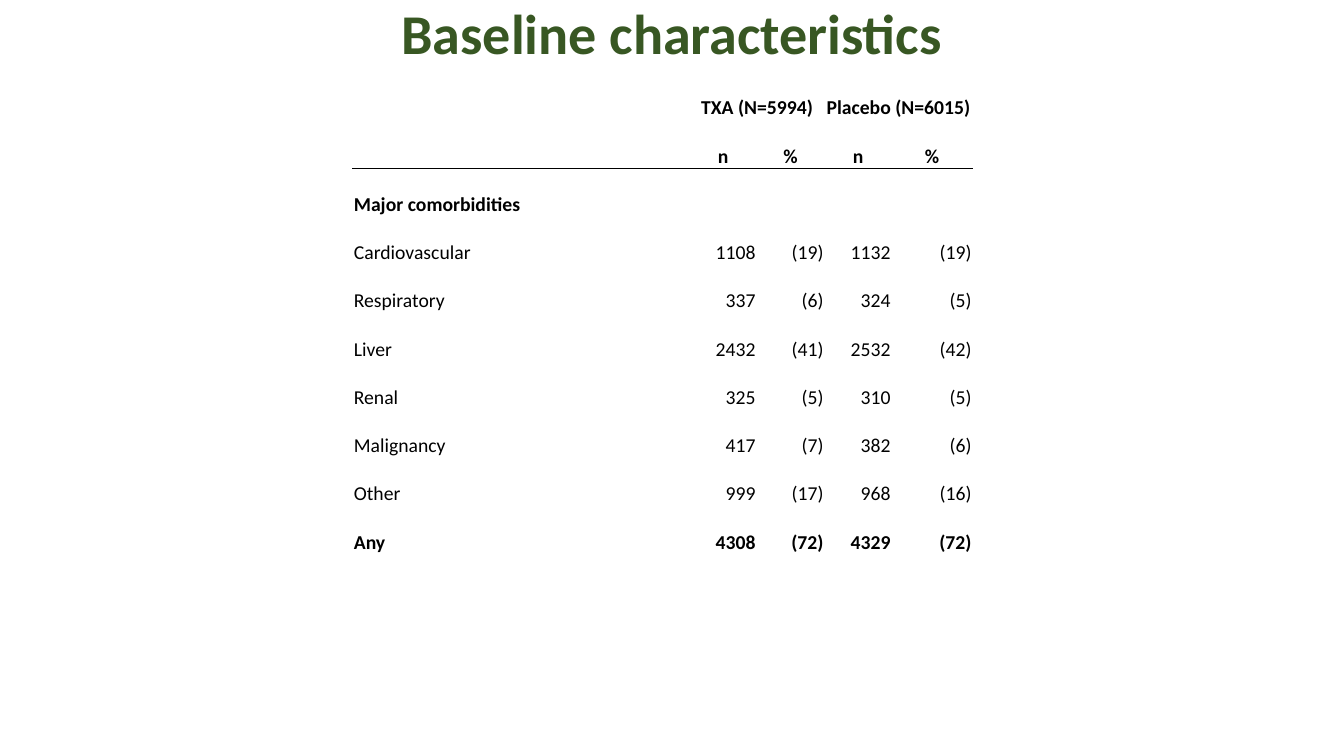
"""Build the baseline characteristics slide with its comorbidity table."""
from dataclasses import dataclass

from lxml.etree import SubElement
from pptx import Presentation
from pptx.dml.color import RGBColor
from pptx.enum.text import MSO_ANCHOR, PP_ALIGN
from pptx.oxml import parse_xml
from pptx.oxml.ns import nsdecls, qn
from pptx.util import Emu, Inches, Pt

TITLE = "Baseline characteristics"
ROWS = [
    ("", "TXA (N=5994)", "", "Placebo (N=6015)", ""),
    ("", "n", "%", "n", "%"),
    ("Major comorbidities", "", "", "", ""),
    ("Cardiovascular", "1108", "(19)", "1132", "(19)"),
    ("Respiratory", "337", "(6)", "324", "(5)"),
    ("Liver", "2432", "(41)", "2532", "(42)"),
    ("Renal", "325", "(5)", "310", "(5)"),
    ("Malignancy", "417", "(7)", "382", "(6)"),
    ("Other", "999", "(17)", "968", "(16)"),
    ("Any", "4308", "(72)", "4329", "(72)"),
    ("", "", "", "", ""),
    ("", "", "", "", ""),
]
HEADER_ROWS = (0, 1)
BOLD_ROWS = (0, 1, 2, 9)
GROUP_COLUMNS = (1, 3)
RULE_SIDES = {1: "lnB", 2: "lnT"}

SLIDE_SIZE = (13.3, 7.48)
TITLE_BOX = (92, 0, 1160, 72)
TABLE_LEFT, TABLE_TOP, TABLE_HEIGHT = 353, 72, 579
COLUMN_WIDTHS = (337, 67, 68, 67, 81)


@dataclass(frozen=True)
class Theme:
    font: str = "Calibri"
    title_color: RGBColor = RGBColor(0x38, 0x57, 0x23)
    text_color: RGBColor = RGBColor(0, 0, 0)
    title_size: int = 40
    text_size: int = 14
    rule_width: int = 1


THEME = Theme()


def px(length):
    return Emu(round(length * 914400 / 101.1))


def format_text(paragraph, size, color, bold, alignment):
    paragraph.alignment = alignment
    for run in paragraph.runs:
        run.font.name = THEME.font
        run.font.size = Pt(size)
        run.font.bold = bold
        run.font.color.rgb = color


def add_rule(cell, side):
    width = Pt(THEME.rule_width)
    line = parse_xml(f'<a:{side} {nsdecls("a")} w="{width}"/>')
    fill = SubElement(line, qn("a:solidFill"))
    SubElement(fill, qn("a:srgbClr"), val=str(THEME.text_color))
    cell._tc.get_or_add_tcPr().insert(0, line)


def fill_cell(cell, text, row, column):
    cell.fill.background()
    cell.vertical_anchor = MSO_ANCHOR.BOTTOM
    cell.margin_left = cell.margin_right = cell.margin_top = px(1)
    cell.margin_bottom = 0
    if row in RULE_SIDES:
        add_rule(cell, RULE_SIDES[row])
    if not text:
        return
    if column == 0:
        alignment = PP_ALIGN.LEFT
    else:
        alignment = PP_ALIGN.CENTER if row in HEADER_ROWS else PP_ALIGN.RIGHT
    cell.text_frame.text = text
    format_text(cell.text_frame.paragraphs[0], THEME.text_size,
                THEME.text_color, row in BOLD_ROWS, alignment)


def add_title(slide):
    title = slide.shapes.title
    title.left, title.top, title.width, title.height = map(px, TITLE_BOX)
    title.text_frame.text = TITLE
    title.text_frame.vertical_anchor = MSO_ANCHOR.MIDDLE
    paragraph = title.text_frame.paragraphs[0]
    paragraph.line_spacing = 0.9
    format_text(paragraph, THEME.title_size, THEME.title_color, True,
                PP_ALIGN.CENTER)


def add_comorbidity_table(slide):
    frame = slide.shapes.add_table(
        len(ROWS), len(COLUMN_WIDTHS), px(TABLE_LEFT), px(TABLE_TOP),
        px(sum(COLUMN_WIDTHS)), px(TABLE_HEIGHT))
    table = frame.table
    table.first_row = table.horz_banding = False
    for column, width in zip(table.columns, COLUMN_WIDTHS):
        column.width = px(width)
    for row, texts in enumerate(ROWS):
        table.rows[row].height = px(TABLE_HEIGHT / len(ROWS))
        for column, text in enumerate(texts):
            fill_cell(table.cell(row, column), text, row, column)
    for column in GROUP_COLUMNS:
        table.cell(0, column).merge(table.cell(0, column + 1))


def main():
    presentation = Presentation()
    presentation.slide_width, presentation.slide_height = map(Inches, SLIDE_SIZE)
    slide = presentation.slides.add_slide(presentation.slide_layouts[5])
    add_comorbidity_table(slide)
    add_title(slide)
    presentation.save("out.pptx")


if __name__ == "__main__":
    main()
